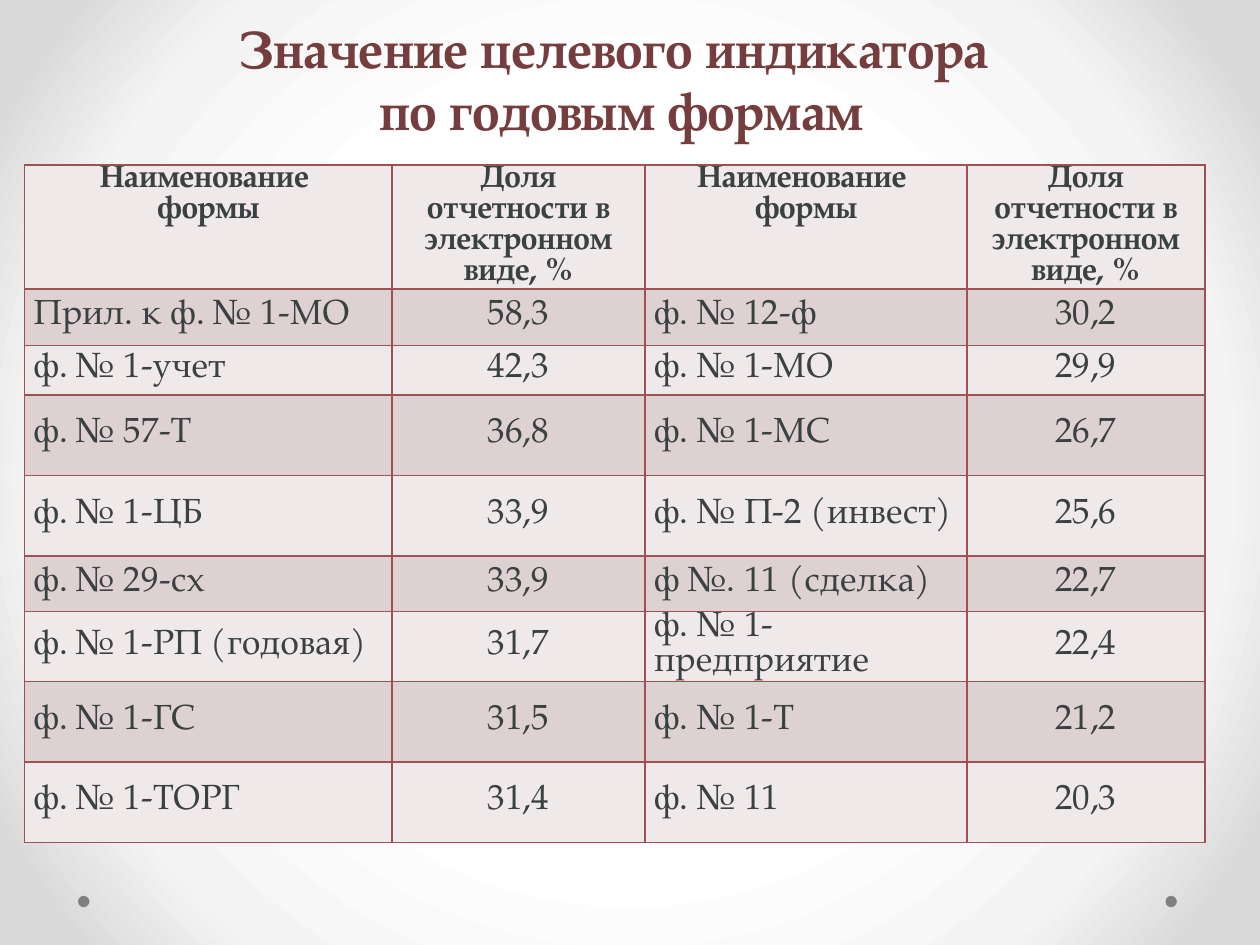
from pptx import Presentation
from pptx import util as u
from pptx.dml.color import RGBColor
from pptx.enum import shapes, text
from pptx.oxml import parse_xml
from pptx.oxml.ns import nsdecls

TITLE = "Значение целевого индикатора \vпо годовым формам"
HEADINGS = ["Наименование \vформы", "Доля отчетности в электронном виде, %"] * 2
ROWS = [
    ("Прил. к ф. № 1-МО", "58,3", "ф. № 12-ф", "30,2"),
    ("ф. № 1-учет", "42,3", "ф. № 1-МО", "29,9"),
    ("ф. № 57-Т", "36,8", "ф. № 1-МС", "26,7"),
    ("ф. № 1-ЦБ", "33,9", "ф. № П-2 (инвест)", "25,6"),
    ("ф. № 29-сх", "33,9", "ф №. 11 (сделка)", "22,7"),
    ("ф. № 1-РП (годовая)", "31,7", "ф. № 1-предприятие", "22,4"),
    ("ф. № 1-ГС", "31,5", "ф. № 1-Т", "21,2"),
    ("ф. № 1-ТОРГ", "31,4", "ф. № 11", "20,3"),
]
COLUMN_WIDTHS = [209.8, 144.7, 183.9, 136.1]
ROW_HEIGHTS = [70.8, 32.4, 28.2, 46, 46, 31.8, 40, 46, 46]

FONT = "TeX Gyre Pagella"
COLORS = {"title": "753D3D", "text": "3B4042", "border": "9C5252",
          "light": "EFE9E9", "dark": "DED1D1", "dot": "808080"}
BACKGROUND_STOPS = [(50, "FFFFFF"), (76, "F4F4F4"), (92, "DADADA")]
LEFT, CENTER = text.PP_ALIGN.LEFT, text.PP_ALIGN.CENTER
TOP, MIDDLE, BOTTOM = text.MSO_ANCHOR.TOP, text.MSO_ANCHOR.MIDDLE, text.MSO_ANCHOR.BOTTOM


def assign(target, values):
    for name, value in values.items():
        setattr(target, name, value)


def write(frame, words, size, color, bold, align, spacing):
    frame.text = words
    frame.word_wrap = True
    para = frame.paragraphs[0]
    assign(para, {"alignment": align, "line_spacing": u.Pt(spacing),
                  "space_before": u.Pt(0), "space_after": u.Pt(0)})
    for span in para.runs:
        assign(span.font, {"name": FONT, "size": u.Pt(size), "bold": bold})
        span.font.color.rgb = RGBColor.from_string(COLORS[color])


def paint_background(page):
    stops = "".join(f'<a:gs pos="{place * 1000}"><a:srgbClr val="{color}"/></a:gs>'
                    for place, color in BACKGROUND_STOPS)
    page._element.cSld.insert(0, parse_xml(
        f'<p:bg {nsdecls("p", "a")}><p:bgPr><a:gradFill rotWithShape="1">'
        f'<a:gsLst>{stops}</a:gsLst><a:path path="circle">'
        '<a:fillToRect l="50000" t="50000" r="50000" b="50000"/></a:path>'
        '</a:gradFill><a:effectLst/></p:bgPr></p:bg>'))


def add_borders(cell):
    """Outline all four sides; the lines must precede the cell's fill."""
    properties = cell._tc.get_or_add_tcPr()
    for index, side in enumerate(("lnL", "lnR", "lnT", "lnB")):
        properties.insert(index, parse_xml(
            f'<a:{side} {nsdecls("a")} w="{u.Pt(1)}"><a:solidFill>'
            f'<a:srgbClr val="{COLORS["border"]}"/></a:solidFill></a:{side}>'))


def add_dots(page):
    for left in (44.6, 666):
        dot = page.shapes.add_shape(shapes.MSO_SHAPE.OVAL, u.Pt(left), u.Pt(511.9),
                                    u.Pt(6.5), u.Pt(6.5))
        dot.shadow.inherit = False
        dot.fill.solid()
        dot.fill.fore_color.rgb = RGBColor.from_string(COLORS["dot"])
        dot.line.fill.background()


def add_title(page):
    title = page.shapes.title
    assign(title, {"left": u.Pt(31), "top": u.Pt(15.1),
                   "width": u.Pt(648), "height": u.Pt(65.5)})
    write(title.text_frame, TITLE, 30, "title", True, CENTER, 35.4)
    assign(title.text_frame, {"vertical_anchor": BOTTOM, "margin_top": 0, "margin_bottom": 0,
                              "auto_size": text.MSO_AUTO_SIZE.NONE})


def add_forms_table(page):
    content = [HEADINGS, *ROWS]
    table = page.shapes.add_table(
        len(content), len(HEADINGS), u.Pt(14.1), u.Pt(94.3),
        u.Pt(sum(COLUMN_WIDTHS)), u.Pt(sum(ROW_HEIGHTS))).table
    assign(table, {"first_row": False, "horz_banding": False})
    for column, width in zip(table.columns, COLUMN_WIDTHS):
        column.width = u.Pt(width)
    for r, (row, height, values) in enumerate(zip(table.rows, ROW_HEIGHTS, content)):
        row.height = u.Pt(height)
        heading = r == 0
        for c, (cell, words) in enumerate(zip(row.cells, values)):
            assign(cell, {"margin_left": u.Pt(5.2), "margin_right": u.Pt(5.2),
                          "margin_top": 0, "margin_bottom": 0,
                          "vertical_anchor": TOP if heading else MIDDLE})
            cell.fill.solid()
            cell.fill.fore_color.rgb = RGBColor.from_string(COLORS["dark" if r % 2 else "light"])
            add_borders(cell)
            align = CENTER if heading or c % 2 else LEFT
            size, spacing = (18, 17.7) if heading else (20, 20)
            write(cell.text_frame, words, size, "text", heading, align, spacing)


def main():
    deck = Presentation()
    assign(deck, {"slide_width": u.Pt(720), "slide_height": u.Pt(540)})
    page = deck.slides.add_slide(deck.slide_layouts[5])
    paint_background(page)
    add_dots(page)
    add_title(page)
    add_forms_table(page)
    deck.save("out.pptx")


if __name__ == "__main__":
    main()
